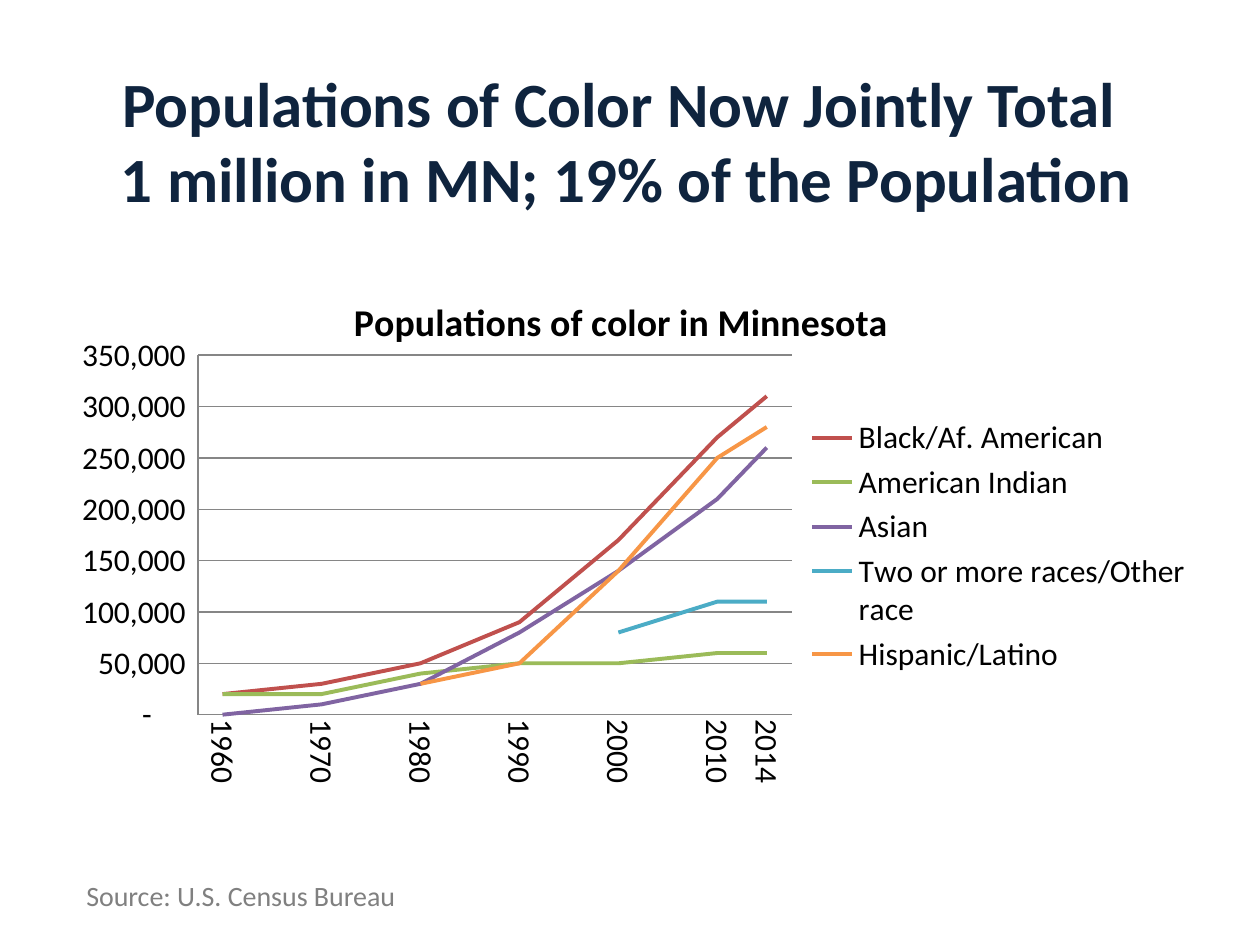
from pptx import Presentation
from pptx import util as u
from pptx.chart.data import CategoryChartData
from pptx.dml.color import RGBColor
from pptx.enum import chart as ch, text
from pptx.oxml import parse_xml
from pptx.oxml.ns import nsdecls

FONT = "Calibri"
YEARS = ["1960", "", "1970", "", "1980", "", "1990", "", "2000", "", "2010", "2014"]
# One value for each labelled year
GROUPS = [
    ("Black/Af. American", "C0504D", [20000, 30000, 50000, 90000, 170000, 270000, 310000]),
    ("American Indian", "9BBB59", [20000, 20000, 40000, 50000, 50000, 60000, 60000]),
    ("Asian", "8064A2", [0, 10000, 30000, 80000, 140000, 210000, 260000]),
    ("Two or more races/Other race", "4BACC6", [None] * 4 + [80000, 110000, 110000]),
    ("Hispanic/Latino", "F79646", [None] * 2 + [30000, 50000, 140000, 250000, 280000]),
]


def color(value):
    return RGBColor.from_string(value)


def set_all(target, values):
    for name, value in values.items():
        setattr(target, name, value)


def style_font(font, size, shade, bold=False):
    set_all(font, {"name": FONT, "size": u.Pt(size), "bold": bold})
    font.color.rgb = color(shade)


def add_text(page, box, lines, size, shade, **formats):
    """Place one paragraph, with a line break between lines."""
    frame = page.shapes.add_textbox(*box).text_frame
    set_all(frame, {"word_wrap": True,
                    "vertical_anchor": formats.get("anchor", text.MSO_ANCHOR.TOP)})
    para = frame.paragraphs[0]
    para.alignment = formats.get("align", text.PP_ALIGN.LEFT)
    for index, line in enumerate(lines):
        if index:
            para.add_line_break()
        span = para.add_run()
        span.text = line
        style_font(span.font, size, shade, formats.get("bold", False))


def manual_layout(chart_box, part_box, inner=False):
    """Return a layout element for a part placed relative to the chart box."""
    target = '<c:layoutTarget val="inner"/>' if inner else ""
    sizes = "".join(f'<c:{tag} val="{length / whole:.4f}"/>'
                    for tag, length, whole in zip("xywh", part_box, chart_box[2:] * 2))
    return parse_xml(
        f'<c:layout {nsdecls("c")}><c:manualLayout>{target}'
        f'<c:xMode val="edge"/><c:yMode val="edge"/>{sizes}'
        "</c:manualLayout></c:layout>")


def style_axes(chart):
    for axis in (chart.category_axis, chart.value_axis):
        set_all(axis, {"major_tick_mark": ch.XL_TICK_MARK.NONE,
                       "minor_tick_mark": ch.XL_TICK_MARK.NONE})
        style_font(axis.tick_labels.font, 18, "000000")
        axis.format.line.width = u.Pt(0.75)
        axis.format.line.color.rgb = color("868686")
    set_all(chart.value_axis, {"minimum_scale": 0, "maximum_scale": 350000,
                               "major_unit": 50000, "has_major_gridlines": True})
    grid = chart.value_axis.major_gridlines.format.line
    grid.width = u.Pt(0.75)
    grid.color.rgb = color("868686")
    set_all(chart.value_axis.tick_labels, {
        "number_format": '_(* #,##0_);_(* (#,##0);_(* "-"??_);_(@_)',
        "number_format_is_linked": False})
    for body in chart.element.xpath(".//c:catAx/c:txPr/a:bodyPr"):
        body.set("rot", "5400000")
        body.set("vert", "horz")


def arrange_chart(chart, box):
    """Fix the plot and legend areas and join lines across unlabelled years."""
    for layout in chart.element.xpath(".//c:plotArea/c:layout | .//c:legend/c:layout"):
        layout.getparent().remove(layout)
    plot_area = chart.element.xpath(".//c:plotArea")[0]
    plot_area.insert(0, manual_layout(box, box_cm(3.25, 1.7, 11.97, 7.25), inner=True))
    overlay = chart.element.xpath(".//c:legend/c:overlay")[0]
    overlay.addprevious(manual_layout(box, box_cm(15.5, 2.85, 7.78, 5.39)))
    for blanks in chart.element.xpath(".//c:dispBlanksAs"):
        blanks.set("val", "span")


def add_population_chart(page, box):
    data = CategoryChartData(number_format="#,##0")
    data.categories = YEARS
    for name, _, values in GROUPS:
        remaining = iter(values)
        data.add_series(name, [next(remaining) if year else None for year in YEARS])
    chart = page.shapes.add_chart(ch.XL_CHART_TYPE.LINE, *box, data).chart
    style_font(chart.font, 18, "000000")
    chart.has_title = True
    title = chart.chart_title.text_frame
    title.text = "Populations of color in Minnesota"
    style_font(title.paragraphs[0].runs[0].font, 21.6, "000000", bold=True)
    chart.has_legend = True
    set_all(chart.legend, {"position": ch.XL_LEGEND_POSITION.RIGHT,
                           "include_in_layout": False})
    style_font(chart.legend.font, 18, "000000")
    chart.plots[0].vary_by_categories = False
    for series, (_, shade, _) in zip(chart.plots[0].series, GROUPS):
        series.smooth = False
        series.marker.style = ch.XL_MARKER_STYLE.NONE
        series.format.line.width = u.Pt(2.25)
        series.format.line.color.rgb = color(shade)
    style_axes(chart)
    arrange_chart(chart, box)


def box_cm(*lengths):
    return [u.Cm(length) for length in lengths]


def main():
    deck = Presentation()
    set_all(deck, {"slide_width": u.Cm(25.4), "slide_height": u.Cm(19.05)})
    page = deck.slides.add_slide(deck.slide_layouts[6])
    add_text(page, box_cm(1.2, 1.23, 22.86, 3.18),
             ["Populations of Color Now Jointly Total ",
              "1 million in MN; 19% of the Population"],
             36, "0F243E", bold=True, align=text.PP_ALIGN.CENTER,
             anchor=text.MSO_ANCHOR.MIDDLE)
    add_population_chart(page, box_cm(0.74, 5.46, 23.57, 11.07))
    add_text(page, box_cm(1.49, 17.58, 22.07, 0.94),
             ["Source: U.S. Census Bureau"], 16, "808080")
    deck.save("out.pptx")


if __name__ == "__main__":
    main()
